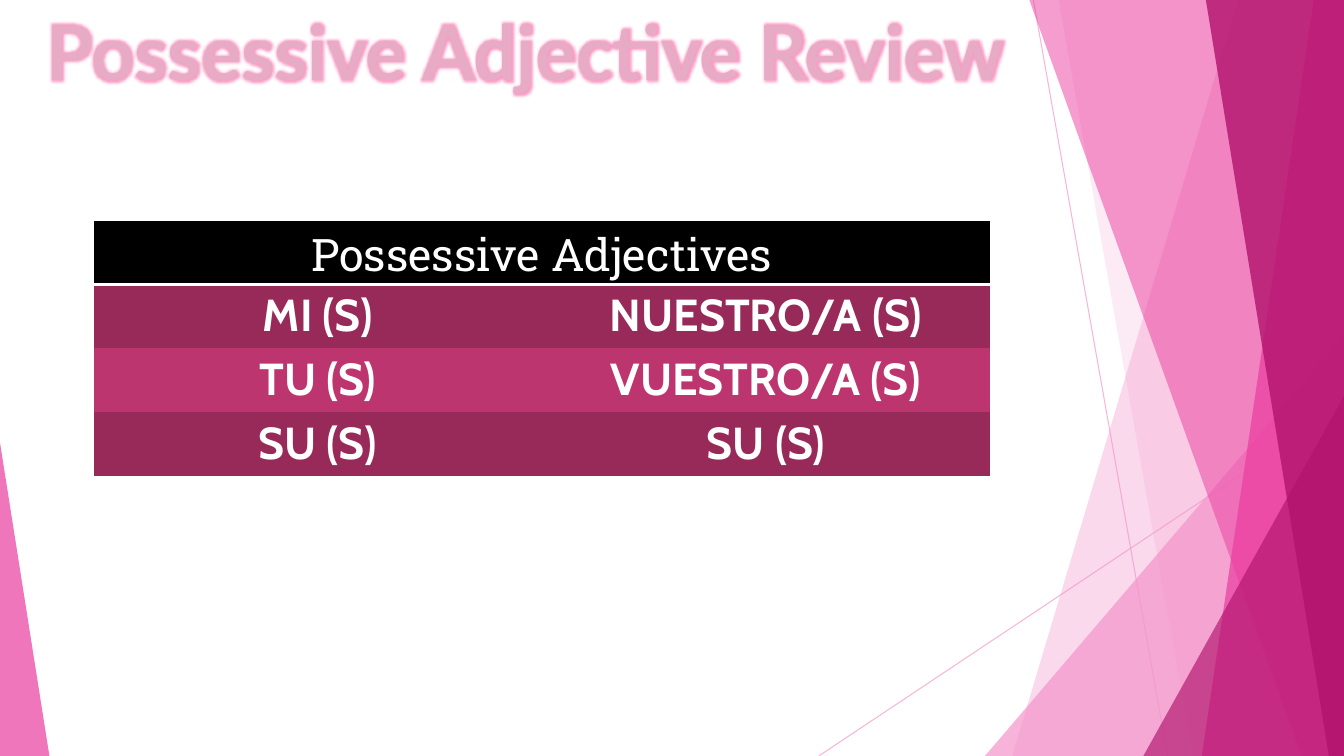
import dataclasses
import lxml.etree
import pptx
import pptx.dml.color
import pptx.enum.dml
import pptx.enum.shapes
import pptx.enum.text
import pptx.oxml
import pptx.oxml.ns
import pptx.util

qn = pptx.oxml.ns.qn
NO_GRID = "{2D5ABB26-0587-4C30-8999-92F81FD0307C}"


@dataclasses.dataclass(frozen=True)
class Theme:
    light: str = "F496CB"
    pink: str = "EB3D9F"
    deep: str = "B2136D"
    title: str = "E7ABC5"
    edge: str = "BC356F"
    glow: str = "F99BC4"
    head: str = "000000"
    white: str = "FFFFFF"
    bands: tuple = ("972A59", "BC356F")
    title_size: float = 54
    cell_size: float = 32
    title_font: str = "Lato"
    head_font: str = "Roboto Slab"
    cell_font: str = "Cabin"


@dataclasses.dataclass(frozen=True)
class Box:
    left: int
    top: int
    width: int
    height: int

    def at(self, x, y):
        """Point at x and y percent of the box."""
        return (round(self.left + self.width * x / 100),
                round(self.top + self.height * y / 100))

    def inner(self, x, y, wide, high):
        """Inner box, in percent of this one."""
        return Box(*self.at(x, y), round(self.width * wide / 100),
                   round(self.height * high / 100))

    def frame(self):
        return self.left, self.top, self.width, self.height


THEME = Theme()


def rgb(code):
    return pptx.dml.color.RGBColor.from_string(code)


def add_node(parent, tag, **attrs):
    node = lxml.etree.SubElement(parent, qn(tag))
    for name, value in attrs.items():
        node.set(name, str(value))
    return node


def paint(fill, color, alpha=100):
    """Solid colour with a given opacity in percent."""
    fill.solid()
    fill.fore_color.rgb = rgb(color)
    if alpha < 100:
        node = fill._xPr.find(qn("a:solidFill"))[0]
        add_node(node, "a:alpha", val=alpha * 1000)


def write(frame, text, font, size, color, bold=False):
    para = frame.paragraphs[0]
    para.alignment = pptx.enum.text.PP_ALIGN.CENTER
    run = para.add_run()
    run.text = text
    run.font.name = font
    run.font.size = pptx.util.Pt(size)
    run.font.bold = bold
    run.font.color.rgb = rgb(color)
    return run


# Background facets
def add_ray(slide, start, end):
    ray = slide.shapes.add_connector(
        pptx.enum.shapes.MSO_CONNECTOR.STRAIGHT, *start, *end)
    ray.line.width = pptx.util.Pt(0.75)
    paint(ray.line.fill, THEME.light, 70)
    add_node(ray._element.spPr, "a:effectLst")


def finish(shape, color, alpha):
    shape.shadow.inherit = False
    paint(shape.fill, color, alpha)
    shape.line.fill.background()


def add_strip(slide, box, top, foot, color, alpha):
    """Facet from a slanted left edge to the right side of the box."""
    outline = slide.shapes.build_freeform(*box.at(top, 0))
    outline.add_line_segments(
        [box.at(100, 0), box.at(100, 100), box.at(foot, 100)], close=True)
    finish(outline.convert_to_shape(), color, alpha)


def add_wedge(slide, box, apex, color, alpha):
    wedge = slide.shapes.add_shape(
        pptx.enum.shapes.MSO_SHAPE.ISOSCELES_TRIANGLE, *box.frame())
    wedge.adjustments[0] = apex
    finish(wedge, color, alpha)


def add_facets(slide, box):
    add_ray(slide, box.at(76.89, 0), box.at(86.87, 100))
    add_ray(slide, box.at(100, 53.73), box.at(60.92, 100))
    add_strip(slide, box, 92.12, 75.32, THEME.light, 36)
    add_strip(slide, box, 78.77, 88.75, THEME.light, 20)
    add_wedge(slide, box.inner(73.29, 44.4, 26.71, 55.6), 1, THEME.light, 72)
    add_strip(slide, box, 76.59, 96.85, THEME.pink, 50)
    add_strip(slide, box, 97.75, 89.42, THEME.pink, 70)
    add_strip(slide, box, 89.72, 98.87, THEME.deep, 80)
    add_wedge(slide, box.inner(85.07, 52.4, 14.93, 47.6), 1, THEME.deep, 66)
    add_wedge(slide, box.inner(0, 58.53, 3.68, 41.47), 0, THEME.pink, 70)


# Glowing title
def add_title(slide, box, text):
    title = slide.shapes.title
    title.left, title.top, title.width, title.height = box.frame()
    slide.shapes._spTree.append(title._element)
    frame = title.text_frame
    frame.word_wrap = True
    frame.auto_size = pptx.enum.text.MSO_AUTO_SIZE.NONE
    frame.vertical_anchor = pptx.enum.text.MSO_ANCHOR.TOP
    run = write(frame, text, THEME.title_font, THEME.title_size,
                THEME.title, bold=True)
    props = run.font._element
    edge = lxml.etree.Element(qn("a:ln"), w=str(pptx.util.Pt(1.75)))
    add_node(add_node(edge, "a:solidFill"), "a:srgbClr", val=THEME.edge)
    props.insert(0, edge)
    effects = lxml.etree.Element(qn("a:effectLst"))
    glow = add_node(effects, "a:glow", rad=pptx.util.Pt(5))
    add_node(glow, "a:srgbClr", val=THEME.glow)
    props.find(qn("a:solidFill")).addnext(effects)


# Table of adjectives
def fill_cell(cell, text, color, font, bold):
    paint(cell.fill, color)
    cell.margin_top = cell.margin_bottom = pptx.util.Inches(0.04)
    write(cell.text_frame, text, font, THEME.cell_size, THEME.white, bold)


def add_rule(cell):
    """White line below a cell."""
    props = cell._tc.get_or_add_tcPr()
    rule = lxml.etree.Element(qn("a:lnB"), w=str(pptx.util.Pt(2)))
    add_node(add_node(rule, "a:solidFill"), "a:srgbClr", val=THEME.white)
    props.insert(0, rule)


def add_grid(slide, box, heading, rows):
    count = len(rows) + 1
    grid = slide.shapes.add_table(count, len(rows[0]), *box.frame()).table
    grid._tbl.tblPr.find(qn("a:tableStyleId")).text = NO_GRID
    for row in grid.rows:
        row.height = box.height // count
    grid.cell(0, 0).merge(grid.cell(0, len(rows[0]) - 1))
    fill_cell(grid.cell(0, 0), heading, THEME.head, THEME.head_font, False)
    grid.cell(0, 0).margin_bottom = 0
    for cell in grid.rows[0].cells:
        add_rule(cell)
    for r, row in enumerate(rows):
        for c, text in enumerate(row):
            fill_cell(grid.cell(r + 1, c), text, THEME.bands[r % 2],
                      THEME.cell_font, True)


def main():
    deck = pptx.Presentation()
    deck.slide_width = pptx.util.Inches(13.33)
    deck.slide_height = pptx.util.Inches(7.5)
    slide = deck.slides.add_slide(deck.slide_layouts[5])
    page = Box(0, 0, deck.slide_width, deck.slide_height)
    paint(slide.background.fill, THEME.white)
    add_facets(slide, page)
    add_title(slide, page.inner(0, 0, 78.17, 25.6),
              "Possessive Adjective Review")
    add_grid(slide, page.inner(6.98, 29.2, 66.69, 33.73),
             "Possessive Adjectives",
             [("MI (S)", "NUESTRO/A (S)"),
              ("TU (S)", "VUESTRO/A (S)"),
              ("SU (S)", "SU (S)")])
    deck.save("out.pptx")


if __name__ == "__main__":
    main()
